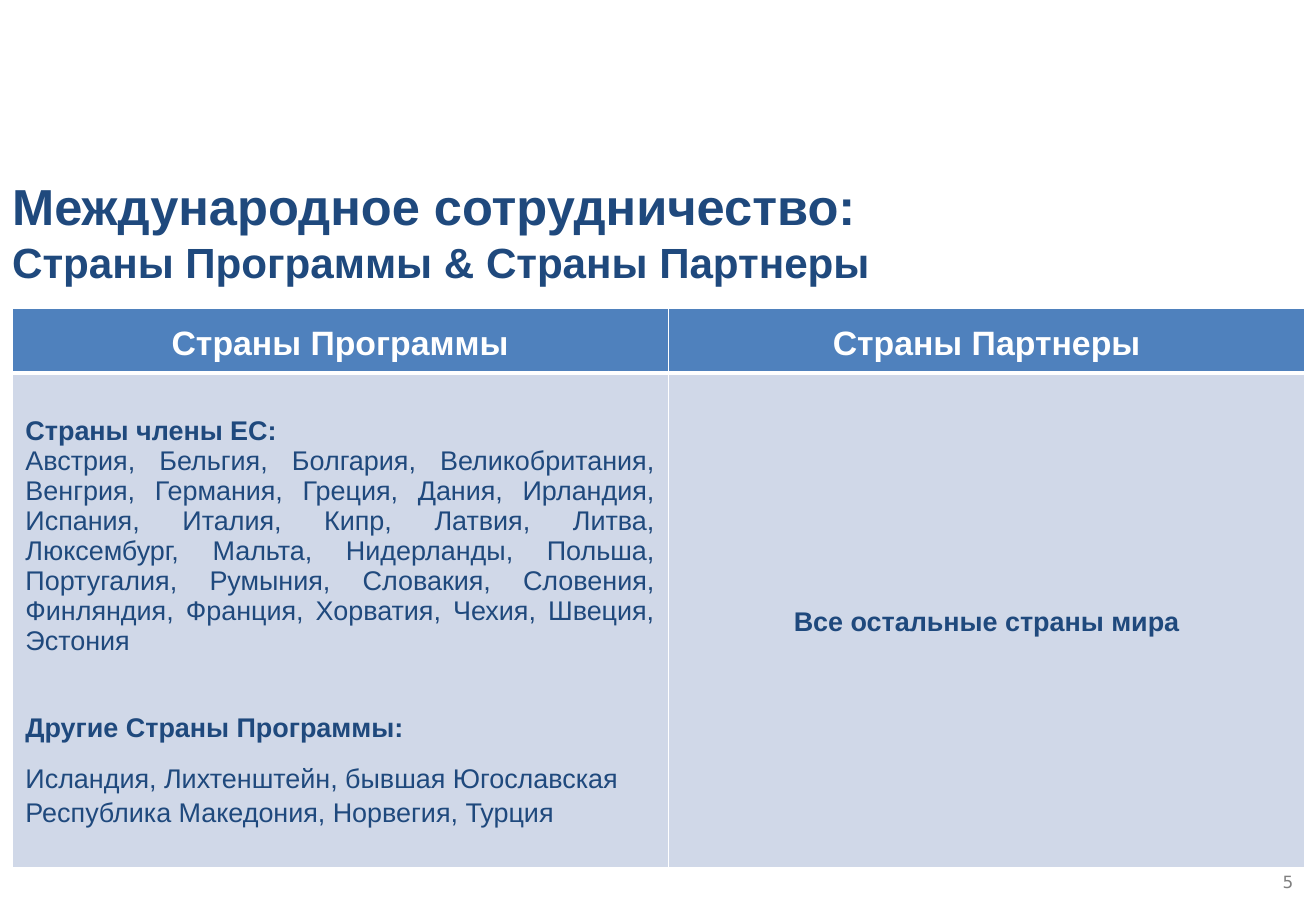
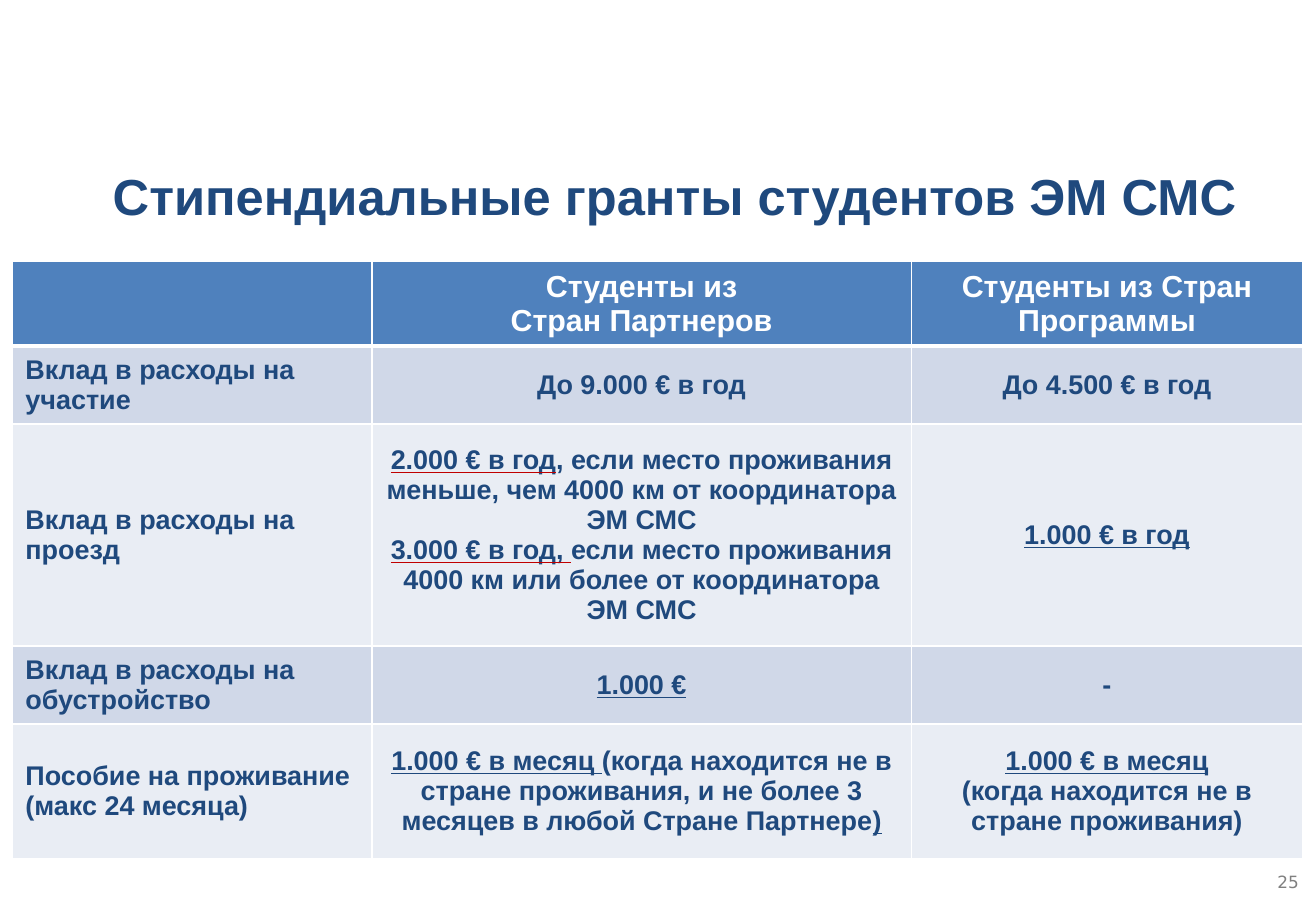
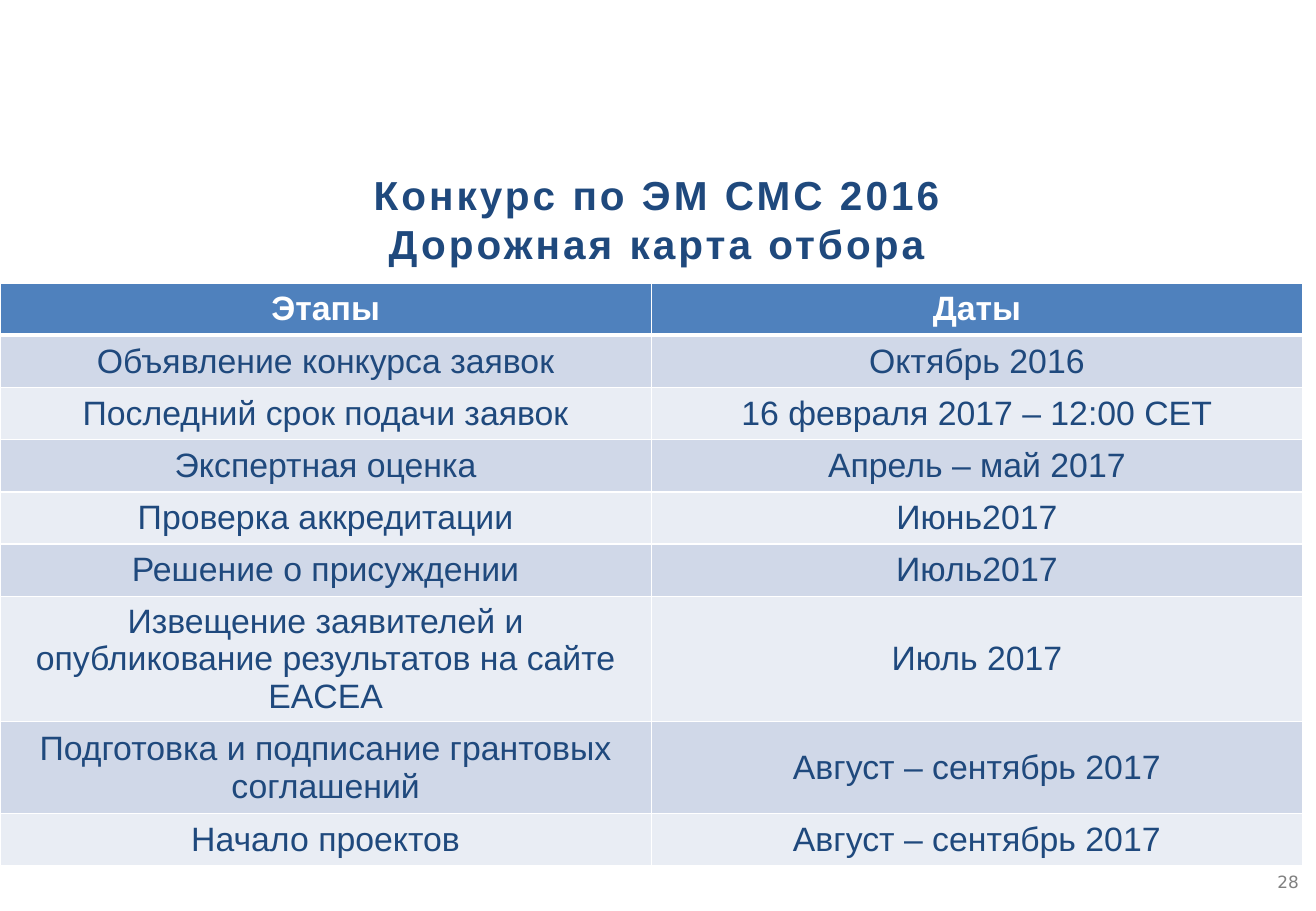
from dataclasses import dataclass

import lxml.etree
import pptx
import pptx.dml.color
import pptx.enum.text
import pptx.oxml.ns
import pptx.util
from pptx.util import Inches

NAVY = pptx.dml.color.RGBColor(0x1F, 0x49, 0x7D)
BLUE = pptx.dml.color.RGBColor(0x4F, 0x81, 0xBD)
BAND_DARK = pptx.dml.color.RGBColor(0xD0, 0xD8, 0xE8)
BAND_LIGHT = pptx.dml.color.RGBColor(0xE9, 0xED, 0xF4)
WHITE = pptx.dml.color.RGBColor(0xFF, 0xFF, 0xFF)
GREY = pptx.dml.color.RGBColor(0x80, 0x80, 0x80)
RED = pptx.dml.color.RGBColor(0xC0, 0x00, 0x00)

FONT = "Arial"
NUMBER_FONT = "DejaVu Sans"
TITLE_ONLY = 5
ALIGN = pptx.enum.text.PP_ALIGN
LEFT, CENTER, JUSTIFY = ALIGN.LEFT, ALIGN.CENTER, ALIGN.JUSTIFY
MIDDLE = pptx.enum.text.MSO_ANCHOR.MIDDLE


@dataclass
class Under:
    """Underlined words, with an optional colour for the line."""
    text: str
    color: pptx.dml.color.RGBColor = None


@dataclass
class Grid:
    """Place and text style of one table."""
    left: float
    top: float
    widths: list
    heights: list
    aligns: list
    header_size: int
    body_size: int
    body_bold: bool
    inset: float = 0.11


def add_xml(parent, tag, **attributes):
    return lxml.etree.SubElement(parent, pptx.oxml.ns.qn(tag), **attributes)


def style_span(span, size, color, bold, name=FONT):
    span.font.name = name
    span.font.size = pptx.util.Pt(size)
    span.font.bold = bold
    span.font.color.rgb = color


def color_underline(span, color):
    properties = span.font._element
    line = add_xml(properties, "a:uFill")
    add_xml(add_xml(line, "a:solidFill"), "a:srgbClr", val=str(color))
    properties.find(pptx.oxml.ns.qn("a:solidFill")).addnext(line)


def write_text(frame, content, align, size, color, bold):
    """Write a string of lines, or a list of paragraphs made of parts."""
    lines = content
    if isinstance(content, str):
        lines = [[line] for line in content.split("\n")]
    for index, parts in enumerate(lines):
        para = frame.add_paragraph() if index else frame.paragraphs[0]
        para.alignment = align
        for part in parts:
            underlined = isinstance(part, Under)
            span = para.add_run()
            span.text = part.text if underlined else part
            style_span(span, size, color, bold)
            if underlined:
                span.font.underline = True
                if part.color is not None:
                    color_underline(span, part.color)


def add_page(deck, title, at, sizes, align=CENTER, spacing=None):
    """Add a page with a title, one size per title line."""
    page = deck.slides.add_slide(deck.slide_layouts[TITLE_ONLY])
    box = page.shapes.title
    box.left, box.top = Inches(at[0]), Inches(at[1])
    box.width, box.height = Inches(at[2]), Inches(1.02)
    frame = box.text_frame
    frame.auto_size = pptx.enum.text.MSO_AUTO_SIZE.NONE
    frame.vertical_anchor = MIDDLE
    write_text(frame, title, align, sizes[0], NAVY, True)
    for para, size in zip(frame.paragraphs, sizes):
        for span in para.runs:
            span.font.size = pptx.util.Pt(size)
            if spacing:
                span.font._element.set("spc", str(spacing))
    return page


def add_page_number(page, number):
    box = page.shapes.add_textbox(Inches(10.35), Inches(7.03), Inches(0.5), Inches(0.46))
    frame = box.text_frame
    frame.word_wrap = True
    frame.vertical_anchor = MIDDLE
    frame.text = str(number)
    frame.paragraphs[0].alignment = CENTER
    style_span(frame.paragraphs[0].runs[0], 10, GREY, False, NUMBER_FONT)


def set_borders(cell, top, bottom):
    properties = cell._tc.get_or_add_tcPr()
    for side, points in (("L", 1), ("R", 1), ("T", top), ("B", bottom)):
        line = add_xml(properties, "a:ln" + side, w=str(pptx.util.Pt(points)))
        add_xml(add_xml(line, "a:solidFill"), "a:srgbClr", val=str(WHITE))


def add_grid(page, grid, rows):
    """Add a table with a blue header and banded rows."""
    table = page.shapes.add_table(
        len(rows), len(grid.widths), Inches(grid.left), Inches(grid.top),
        Inches(sum(grid.widths)), Inches(sum(grid.heights))).table
    for column, width in zip(table.columns, grid.widths):
        column.width = Inches(width)
    for row_index, contents in enumerate(rows):
        table.rows[row_index].height = Inches(grid.heights[row_index])
        header = row_index == 0
        fill = BLUE if header else (BAND_LIGHT, BAND_DARK)[row_index % 2]
        for column_index, content in enumerate(contents):
            cell = table.cell(row_index, column_index)
            cell.vertical_anchor = MIDDLE
            cell.margin_left = cell.margin_right = Inches(grid.inset)
            cell.margin_top = cell.margin_bottom = Inches(0.05)
            set_borders(cell, 3 if row_index == 1 else 1, 3 if header else 1)
            cell.fill.solid()
            cell.fill.fore_color.rgb = fill
            if not content:
                continue
            if header:
                write_text(cell.text_frame, content, CENTER, grid.header_size, WHITE, True)
            else:
                write_text(cell.text_frame, content, grid.aligns[column_index],
                           grid.body_size, NAVY, grid.body_bold)
    return table


def add_countries_page(deck):
    page = add_page(deck, "Международное сотрудничество:\nСтраны Программы & Страны Партнеры",
                    (0, 1.39, 10.31), (30, 25), LEFT)
    grid = Grid(0.1, 2.54, [5.4, 5.24], [0.53, 4.07], [JUSTIFY, CENTER], 20, 16, True)
    members = (
        "Австрия, Бельгия, Болгария, Великобритания, Венгрия, Германия, Греция, Дания, "
        "Ирландия, Испания, Италия, Кипр, Латвия, Литва, Люксембург, Мальта, Нидерланды, "
        "Польша, Португалия, Румыния, Словакия, Словения, Финляндия, Франция, Хорватия, "
        "Чехия, Швеция, Эстония")
    countries = "\n".join([
        "Страны члены ЕС:", members, "Другие Страны Программы:",
        "Исландия, Лихтенштейн, бывшая Югославская",
        "Республика Македония, Норвегия, Турция"])
    table = add_grid(page, grid, [
        ["Страны Программы", "Страны Партнеры"],
        [countries, "Все остальные страны мира"]])
    for cell in table.iter_cells():
        for para in cell.text_frame.paragraphs:
            para.line_spacing = 1.15
    heading, eu_list, other_heading, *other_lists = table.cell(1, 0).text_frame.paragraphs
    heading.alignment = LEFT
    eu_list.line_spacing = 1.0
    other_heading.space_before = pptx.util.Pt(31)
    other_heading.space_after = pptx.util.Pt(10)
    for para in (eu_list, *other_lists):
        para.runs[0].font.bold = False
    add_page_number(page, 5)


def add_grants_page(deck):
    page = add_page(deck, "Стипендиальные гранты студентов ЭМ СМС", (0.68, 1.1, 9.75), (30,))
    grid = Grid(0.1, 2.15, [2.96, 4.44, 3.22], [0.7, 0.64, 1.83, 0.64, 1.11],
                [LEFT, CENTER, CENTER], 18, 16, True)
    travel = [
        [Under("2.000 € в год", RED),
         ", если место проживания меньше, чем 4000 км от координатора ЭМ СМС"],
        [Under("3.000 € в год, ", RED),
         "если место проживания 4000 км или более от координатора ЭМ СМС"]]
    living = [[
        Under("1.000 € в месяц "),
        "(когда находится не в стране проживания, и не более 3 месяцев в любой Стране Партнере",
        Under(")")]]
    add_grid(page, grid, [
        ["", "Студенты из\nСтран Партнеров", "Студенты из Стран Программы"],
        ["Вклад в расходы на участие", "До 9.000 € в год", "До 4.500 € в год"],
        ["Вклад в расходы на проезд", travel, [[Under("1.000 € в год")]]],
        ["Вклад в расходы на обустройство", [[Under("1.000 €")]], "-"],
        ["Пособие на проживание\n(макс 24 месяца)", living,
         [[Under("1.000 € в месяц")], ["(когда находится не в стране проживания)"]]]])
    add_page_number(page, 25)


def add_roadmap_page(deck):
    page = add_page(deck, "Конкурс по ЭМ СМС 2016\nДорожная карта отбора",
                    (0.25, 1.29, 10.31), (24, 24), spacing=180)
    grid = Grid(0, 2.33, [5.36] * 2, [0.43] * 6 + [0.73, 0.76, 0.43],
                [CENTER] * 2, 20, 20, False, 0.1)
    add_grid(page, grid, [
        ["Этапы", "Даты"],
        ["Объявление конкурса заявок", "Октябрь 2016"],
        ["Последний срок подачи заявок", "16 февраля 2017 – 12:00 CET"],
        ["Экспертная оценка", "Апрель – май 2017"],
        ["Проверка аккредитации", "Июнь2017"],
        ["Решение о присуждении", "Июль2017"],
        ["Извещение заявителей и опубликование результатов на сайте EACEA", "Июль 2017"],
        ["Подготовка и подписание грантовых соглашений", "Август – сентябрь 2017"],
        ["Начало проектов", "Август – сентябрь 2017"]])
    add_page_number(page, 28)


def main():
    deck = pptx.Presentation()
    deck.slide_width, deck.slide_height = Inches(10.83), Inches(7.5)
    add_countries_page(deck)
    add_grants_page(deck)
    add_roadmap_page(deck)
    deck.save("out.pptx")


if __name__ == "__main__":
    main()
